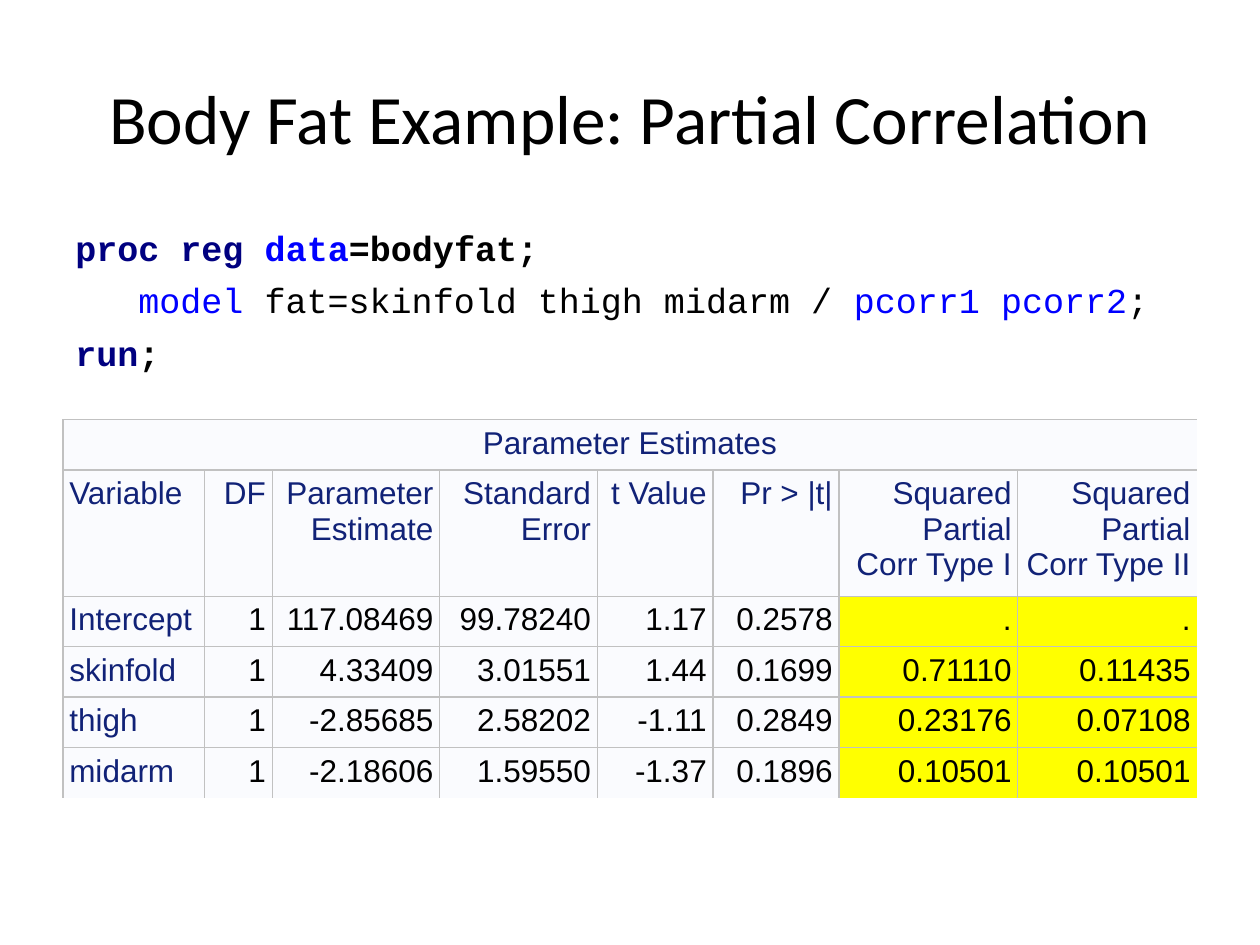
from pptx import Presentation
from pptx import util as u
from pptx.dml.color import RGBColor
from pptx.enum import text
from lxml import etree
from pptx.oxml import ns

BLACK = RGBColor(0x00, 0x00, 0x00)
NAVY = RGBColor(0x00, 0x00, 0x80)
BLUE = RGBColor(0x00, 0x00, 0xFF)
INK = RGBColor(0x11, 0x22, 0x77)
PALE = RGBColor(0xFA, 0xFB, 0xFE)
YELLOW = RGBColor(0xFF, 0xFF, 0x00)
GREY = RGBColor(0xC1, 0xC1, 0xC1)

CODE = [
    (0, [("proc reg ", NAVY, True), ("data", BLUE, True),
         ("=bodyfat;", BLACK, True)]),
    (0.5, [("model", BLUE, False),
           (" fat=skinfold thigh midarm / ", BLACK, False),
           ("pcorr1 pcorr2", BLUE, False), (";", BLACK, False)]),
    (0, [("run", NAVY, True), (";", BLACK, True)]),
]
WIDTHS = [1.12, 0.54, 1.33, 1.25, 0.92, 1, 1.42, 1.42]
ROWS = [
    ["Parameter Estimates"] + [""] * 7,
    ["Variable", "DF", "Parameter\nEstimate", "Standard\nError", "t\u00a0Value",
     "Pr\u00a0>\u00a0|t|", "Squared\nPartial\nCorr Type I",
     "Squared\nPartial\nCorr Type II"],
    ["Intercept", "1", "117.08469", "99.78240", "1.17", "0.2578", ".", "."],
    ["skinfold", "1", "4.33409", "3.01551", "1.44", "0.1699", "0.71110", "0.11435"],
    ["thigh", "1", "-2.85685", "2.58202", "-1.11", "0.2849", "0.23176", "0.07108"],
    ["midarm", "1", "-2.18606", "1.59550", "-1.37", "0.1896", "0.10501", "0.10501"],
]


def add_run(para, words, face, size, color, bold=False):
    run = para.add_run()
    run.text = words
    font = run.font
    font.name, font.size, font.bold = face, u.Pt(size), bold
    font.color.rgb = color


def add_title(slide):
    title = slide.shapes.title
    title.left, title.top = u.Inches(0.5), u.Inches(0.3)
    title.width, title.height = u.Inches(9), u.Inches(1.25)
    frame = title.text_frame
    frame.vertical_anchor = text.MSO_ANCHOR.MIDDLE
    para = frame.paragraphs[0]
    para.alignment = text.PP_ALIGN.CENTER
    add_run(para, "Body Fat Example: Partial Correlation", "Calibri", 39.6, BLACK)


def add_code(slide):
    box = slide.shapes.add_textbox(
        u.Inches(0.5), u.Inches(1.75), u.Inches(9), u.Inches(1.42))
    frame = box.text_frame
    frame.word_wrap = True
    for row, (indent, parts) in enumerate(CODE):
        para = frame.add_paragraph() if row else frame.paragraphs[0]
        para.space_before = u.Pt(5.8)
        para._p.get_or_add_pPr().set("marL", str(u.Inches(indent)))
        for words, color, bold in parts:
            add_run(para, words, "Courier New", 20, color, bold)


def add_edge(cell, side, shown):
    line = etree.SubElement(cell._tc.get_or_add_tcPr(), ns.qn("a:ln" + side))
    line.set("w", str(u.Pt(0.75)))
    if shown:
        fill = etree.SubElement(line, ns.qn("a:solidFill"))
        etree.SubElement(fill, ns.qn("a:srgbClr")).set("val", str(GREY))
    else:
        etree.SubElement(line, ns.qn("a:noFill"))


def fill_cell(cell, words, row, col):
    last_col, last_row = col == len(WIDTHS) - 1, row == len(ROWS) - 1
    for side in "LRTB":
        hidden = (side == "R" and (last_col or row == 0)) or (side == "B" and last_row)
        add_edge(cell, side, not hidden)
    cell.fill.solid()
    cell.fill.fore_color.rgb = YELLOW if row > 1 and col > 5 else PALE
    cell.margin_left = cell.margin_right = u.Inches(0.05)
    cell.margin_top = cell.margin_bottom = u.Inches(0.05)
    para = cell.text_frame.paragraphs[0]
    if row == 0:
        para.alignment = text.PP_ALIGN.CENTER
    else:
        para.alignment = text.PP_ALIGN.RIGHT if col else text.PP_ALIGN.LEFT
    color = BLACK if row > 1 and col else INK
    for num, part in enumerate(words.split("\n")):
        if num:
            para.add_line_break()
        if part:
            add_run(para, part, "Arial", 18, color)


def add_grid(slide):
    grid = slide.shapes.add_table(
        len(ROWS), len(WIDTHS), u.Inches(0.5), u.Inches(3.33),
        u.Inches(9), u.Inches(2.86)).table
    grid.first_row = grid.horz_banding = False
    for col, width in enumerate(WIDTHS):
        grid.columns[col].width = u.Inches(width)
    for row, cells in enumerate(ROWS):
        grid.rows[row].height = u.Inches(0.94 if row == 1 else 0.38)
        for col, words in enumerate(cells):
            fill_cell(grid.cell(row, col), words, row, col)
    grid.cell(0, 0).merge(grid.cell(0, len(WIDTHS) - 1))


def main():
    deck = Presentation()
    deck.slide_width, deck.slide_height = u.Inches(10), u.Inches(7.5)
    slide = deck.slides.add_slide(deck.slide_layouts[5])
    add_title(slide)
    add_code(slide)
    add_grid(slide)
    deck.save("out.pptx")


if __name__ == "__main__":
    main()
